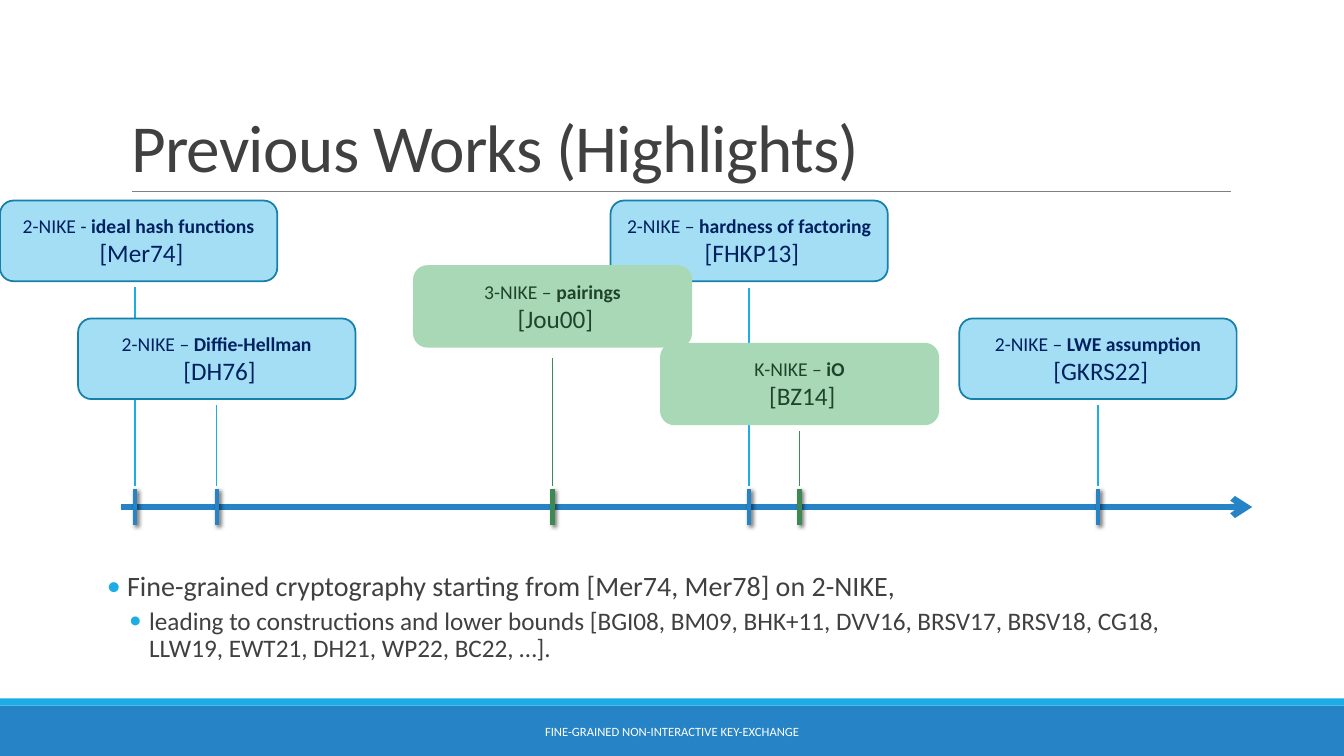
from lxml import etree
from pptx import Presentation
from pptx.dml.color import RGBColor
from pptx.enum.shapes import MSO_CONNECTOR, MSO_SHAPE
from pptx.enum.text import MSO_ANCHOR, MSO_AUTO_SIZE, PP_ALIGN
from pptx.oxml import parse_xml
from pptx.oxml.ns import nsdecls, qn
from pptx.util import Inches, Pt

rgb = RGBColor.from_string
BLUE, CYAN, GREEN, DARK = "2683C6", "1CADE4", "3E8853", "404040"
SHADOW = ('<a:outerShdw blurRad="38100" dist="25400" dir="2700000">'
          '<a:srgbClr val="000000"><a:alpha val="60000"/></a:srgbClr></a:outerShdw>')


def add_line(x1, y1, x2, y2, color, width, effect=""):
    ln = shapes.add_connector(MSO_CONNECTOR.STRAIGHT, *map(Inches, (x1, y1, x2, y2)))
    ln.line.color.rgb = rgb(color)
    ln.line.width = Pt(width)
    ln._element.spPr.append(
        parse_xml(f'<a:effectLst {nsdecls("a")}>{effect}</a:effectLst>'))
    return ln


def add_run(p, text, size, color, bold=False):
    r = p.add_run()
    r.text = text
    r.font.color.rgb = rgb(color)
    for name, value in {"name": "Calibri", "size": Pt(size), "bold": bold}.items():
        setattr(r.font, name, value)
    return r


prs = Presentation()
prs.slide_width, prs.slide_height = Inches(13.33), Inches(7.5)
s = prs.slides.add_slide(prs.slide_layouts[5])
shapes = s.shapes

# Footer bands and title rule
for top, height, color in ((7, 0.5, BLUE), (6.93, 0.07, CYAN)):
    band = shapes.add_shape(MSO_SHAPE.RECTANGLE, 0, Inches(top),
                            prs.slide_width, Inches(height))
    band.shadow.inherit = False
    band.fill.solid()
    band.fill.fore_color.rgb = rgb(color)
    band.line.fill.background()
add_line(1.31, 1.9, 12.21, 1.9, "808080", 0.5)

# Title
title = shapes.title
title.left, title.top, title.width, title.height = map(Inches, (1.2, 0.31, 11, 1.59))
tf = title.text_frame
tf.auto_size = MSO_AUTO_SIZE.NONE
tf.vertical_anchor = MSO_ANCHOR.BOTTOM
p = tf.paragraphs[0]
p.alignment, p.line_spacing = PP_ALIGN.LEFT, 0.85
r = add_run(p, "Previous Works (Highlights)", 48, DARK)
r._r.get_or_add_rPr().set("spc", "-50")

# Footer text
footer = shapes.add_textbox(*map(Inches, (4.03, 7.06, 5.27, 0.4)))
tf = footer.text_frame
tf.word_wrap = True
tf.vertical_anchor = MSO_ANCHOR.MIDDLE
p = tf.paragraphs[0]
p.alignment = PP_ALIGN.CENTER
add_run(p, "FINE-GRAINED NON-INTERACTIVE KEY-EXCHANGE", 9, "FFFFFF")

# Timeline
axis = add_line(1.2, 5.03, 12.42, 5.03, BLUE, 4.5)
etree.SubElement(axis.line._get_or_add_ln(), qn("a:tailEnd"), type="arrow")

# Each style: tick, stem, box fill, box outline, text
two_party = (BLUE, CYAN, "A4DEF4", "1580A9", "002060")
multi_party = (GREEN, GREEN, "A9D8B7", "A9D8B7", "1F442A")
BOX_W, BOX_H = 2.75, 0.8
# Each work: x on the axis, box top, stem top, label, topic, reference, style
works = [
    (1.34, 1.99, 2.85, "2-NIKE - ", "ideal hash functions", "[Mer74]", two_party),
    (2.15, 3.16, 4.02, "2-NIKE – ", "Diffie-Hellman", "[DH76]", two_party),
    (7.43, 1.99, 2.86, "2-NIKE – ", "hardness of factoring", "[FHKP13]", two_party),
    (10.89, 3.16, 4.02, "2-NIKE – ", "LWE assumption", "[GKRS22]", two_party),
    (5.48, 2.64, 3.55, "3-NIKE – ", "pairings", "[Jou00]", multi_party),
    (7.93, 3.41, 4.28, "K-NIKE – ", "iO", "[BZ14]", multi_party),
]
for x, top, stem_top, label, topic, ref, style in works:
    tick, stem, fill, outline, ink = style
    add_line(x, 4.85, x, 5.21, tick, 3, SHADOW)
    add_line(x, 4.82, x, stem_top, stem, 1)
    left = max(0, x - BOX_W / 2)
    box = shapes.add_shape(MSO_SHAPE.ROUNDED_RECTANGLE,
                           *map(Inches, (left, top, BOX_W, BOX_H)))
    box.shadow.inherit = False
    box.fill.solid()
    box.fill.fore_color.rgb = rgb(fill)
    box.line.color.rgb = rgb(outline)
    box.line.width = Pt(1.25)
    tf = box.text_frame
    tf.word_wrap = True
    tf.vertical_anchor = MSO_ANCHOR.MIDDLE
    p, p_ref = tf.paragraphs[0], tf.add_paragraph()
    p.alignment = p_ref.alignment = PP_ALIGN.CENTER
    add_run(p, label, 14, ink)
    add_run(p, topic, 14, ink, bold=True)
    add_run(p_ref, " " + ref, 18, ink)

# Bullets
body = shapes.add_textbox(*map(Inches, (1.06, 5.63, 11, 1.13)))
tf = body.text_frame
tf.word_wrap = True
tf.margin_left = tf.margin_right = 0
# Each bullet: level, margin, hanging indent, space before, space after, size, text
bullets = [
    (0, 0.1, 0.1, 12, 2, 20,
     " Fine-grained cryptography starting from [Mer74, Mer78] on 2-NIKE,"),
    (1, 0.42, 0.2, 2, 4, 18,
     "leading to constructions and lower bounds [BGI08, BM09, BHK+11, DVV16, "
     "BRSV17, BRSV18, CG18, LLW19, EWT21, DH21, WP22, BC22, …]."),
]
for level, margin, hang, before, after, size, text in bullets:
    p = tf.add_paragraph() if level else tf.paragraphs[0]
    for name, value in {"level": level, "line_spacing": 0.9,
                        "space_before": Pt(before), "space_after": Pt(after)}.items():
        setattr(p, name, value)
    pPr = p._p.get_or_add_pPr()
    pPr.set("marL", str(Inches(margin)))
    pPr.set("indent", str(-Inches(hang)))
    color = etree.SubElement(pPr, qn("a:buClr"))
    etree.SubElement(color, qn("a:srgbClr"), val=CYAN)
    etree.SubElement(pPr, qn("a:buFont"), typeface="Calibri")
    etree.SubElement(pPr, qn("a:buChar"), char="•")
    add_run(p, text, size, DARK)

prs.save("out.pptx")
